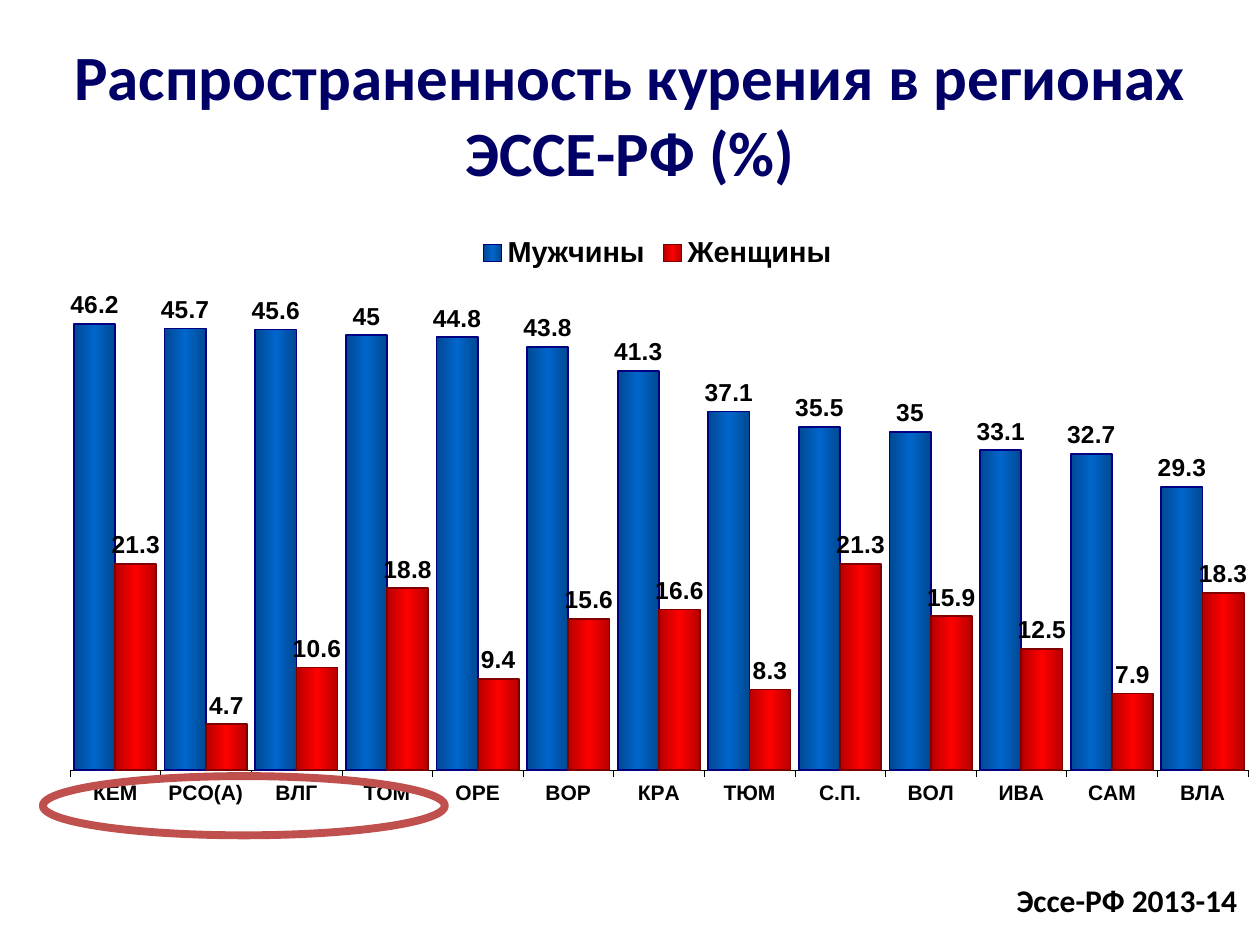
from copy import deepcopy

from lxml.etree import SubElement
from pptx import Presentation
from pptx.chart.data import CategoryChartData
from pptx.dml.color import RGBColor
from pptx.enum.chart import XL_CHART_TYPE, XL_LABEL_POSITION, XL_LEGEND_POSITION, XL_TICK_LABEL_POSITION, XL_TICK_MARK
from pptx.enum.shapes import MSO_SHAPE
from pptx.enum.text import MSO_ANCHOR, MSO_AUTO_SIZE, PP_ALIGN
from pptx.oxml.ns import qn
from pptx.util import Inches, Pt

REGIONS = ["КЕМ", "РСО(А)", "ВЛГ", "ТОМ", "ОРЕ", "ВОР", "КРА", "ТЮМ", "С.П.", "ВОЛ", "ИВА", "САМ", "ВЛА"]
SMOKERS = {
    "Мужчины": [46.2, 45.7, 45.6, 45, 44.8, 43.8, 41.3, 37.1, 35.5, 35, 33.1, 32.7, 29.3],
    "Женщины": [21.3, 4.7, 10.6, 18.8, 9.4, 15.6, 16.6, 8.3, 21.3, 15.9, 12.5, 7.9, 18.3],
}
BAR_COLORS = [("004992", "0066CC", "000080"), ("B60000", "FF0000", "800000")]
PLOT_AREA = {"x": 0.012, "y": 0.107, "w": 0.978, "h": 0.79}


def color(value):
    """Return the colour for a hex string."""
    return RGBColor.from_string(value)


class SlideBuilder:
    """Hold the style and the current slide."""

    text_font = "Calibri"
    chart_font = "Arial"

    def __init__(self, deck):
        """Add a slide that has only a title."""
        self.slide = deck.slides.add_slide(deck.slide_layouts[5])

    def style(self, font, name, size, value="000000"):
        """Make a font bold with a given face, size and colour."""
        font.name, font.size, font.bold = name, Pt(size), True
        font.color.rgb = color(value)

    def outline(self, line, value, width):
        """Give a line its colour and width."""
        line.color.rgb = color(value)
        line.width = Pt(width)

    def place(self, shape, left, top, width, height):
        """Move and size a shape in inches."""
        shape.left, shape.top = Inches(left), Inches(top)
        shape.width, shape.height = Inches(width), Inches(height)

    def title(self, text, *area):
        """Fill the title placeholder."""
        title = self.slide.shapes.title
        self.place(title, *area)
        frame = title.text_frame
        frame.text = text
        frame.vertical_anchor = MSO_ANCHOR.MIDDLE
        frame.paragraphs[0].alignment = PP_ALIGN.CENTER
        self.style(frame.paragraphs[0].runs[0].font, self.text_font, 36, "000066")

    def caption(self, text, *area):
        """Add a one-line text box."""
        box = self.slide.shapes.add_textbox(*map(Inches, area))
        frame = box.text_frame
        frame.text = text
        frame.word_wrap = False
        frame.auto_size = MSO_AUTO_SIZE.SHAPE_TO_FIT_TEXT
        self.style(frame.paragraphs[0].runs[0].font, self.text_font, 18)

    def ring(self, value, width, *area):
        """Add an unfilled ellipse."""
        ellipse = self.slide.shapes.add_shape(MSO_SHAPE.OVAL, *map(Inches, area))
        ellipse.shadow.inherit = False
        ellipse.fill.background()
        self.outline(ellipse.line, value, width)

    def bars(self, series, edge, middle, border):
        """Shade one series from its edges to its middle and label it."""
        fill = series.format.fill
        fill.gradient()
        fill.gradient_angle = 0
        stops = series._element.xpath(".//a:gsLst")[0]
        stops.insert(1, deepcopy(stops[0]))
        for stop, position, value in zip(fill.gradient_stops, (0, 0.5, 1), (edge, middle, edge)):
            stop.position = position
            stop.color.rgb = color(value)
        self.outline(series.format.line, border, 1)
        series.invert_if_negative = False
        labels = series.data_labels
        labels.show_value = True
        labels.position = XL_LABEL_POSITION.OUTSIDE_END
        self.style(labels.font, self.chart_font, 14)

    def axes(self, chart):
        """Show the region axis and hide the value axis."""
        regions = chart.category_axis
        regions.major_tick_mark = XL_TICK_MARK.OUTSIDE
        regions.tick_label_position = XL_TICK_LABEL_POSITION.LOW
        self.style(regions.tick_labels.font, self.chart_font, 12)
        self.outline(regions.format.line, "000000", 0.25)
        values = chart.value_axis
        values.minimum_scale, values.maximum_scale = 0, 50
        values.visible = False
        self.outline(values.major_gridlines.format.line, "FFFFFF", 1)

    def plot_layout(self, chart):
        """Fix the inner plot area as fractions of the chart."""
        area = chart._chartSpace.chart.plotArea
        for old in area.findall(qn("c:layout")):
            area.remove(old)
        layout = SubElement(area, qn("c:layout"))
        area.insert(0, layout)
        manual = SubElement(layout, qn("c:manualLayout"))
        settings = {"layoutTarget": "inner", "xMode": "edge", "yMode": "edge", **PLOT_AREA}
        for name, value in settings.items():
            SubElement(manual, qn(f"c:{name}")).set("val", str(value))

    def column_chart(self, categories, table, palette, *area):
        """Add a clustered column chart with a legend on top."""
        data = CategoryChartData()
        data.categories = categories
        for name, values in table.items():
            data.add_series(name, values)
        frame = self.slide.shapes.add_chart(XL_CHART_TYPE.COLUMN_CLUSTERED, *map(Inches, area), data)
        chart = frame.chart
        chart.has_title = False
        self.style(chart.font, self.chart_font, 18)
        chart.has_legend = True
        chart.legend.position = XL_LEGEND_POSITION.TOP
        chart.legend.include_in_layout = False
        self.style(chart.legend.font, self.chart_font, 16.5)
        plot = chart.plots[0]
        plot.gap_width, plot.overlap, plot.vary_by_categories = 20, 0, False
        for series, colors in zip(plot.series, palette):
            self.bars(series, *colors)
        self.axes(chart)
        self.plot_layout(chart)


def main():
    """Build the slide and save it."""
    deck = Presentation()
    deck.slide_width, deck.slide_height = Inches(10), Inches(7.5)
    page = SlideBuilder(deck)
    page.title("Распространенность курения в регионах ЭССЕ-РФ (%)", 0, 0, 10, 1.8)
    page.column_chart(REGIONS, SMOKERS, BAR_COLORS, 0.44, 1.76, 9.56, 4.85)
    page.caption("Эссе-РФ 2013-14", 7.97, 6.94, 1.97, 0.4)
    page.ring("C0504D", 4.5, 0.34, 6.16, 3.19, 0.47)
    deck.save("out.pptx")


if __name__ == "__main__":
    main()
